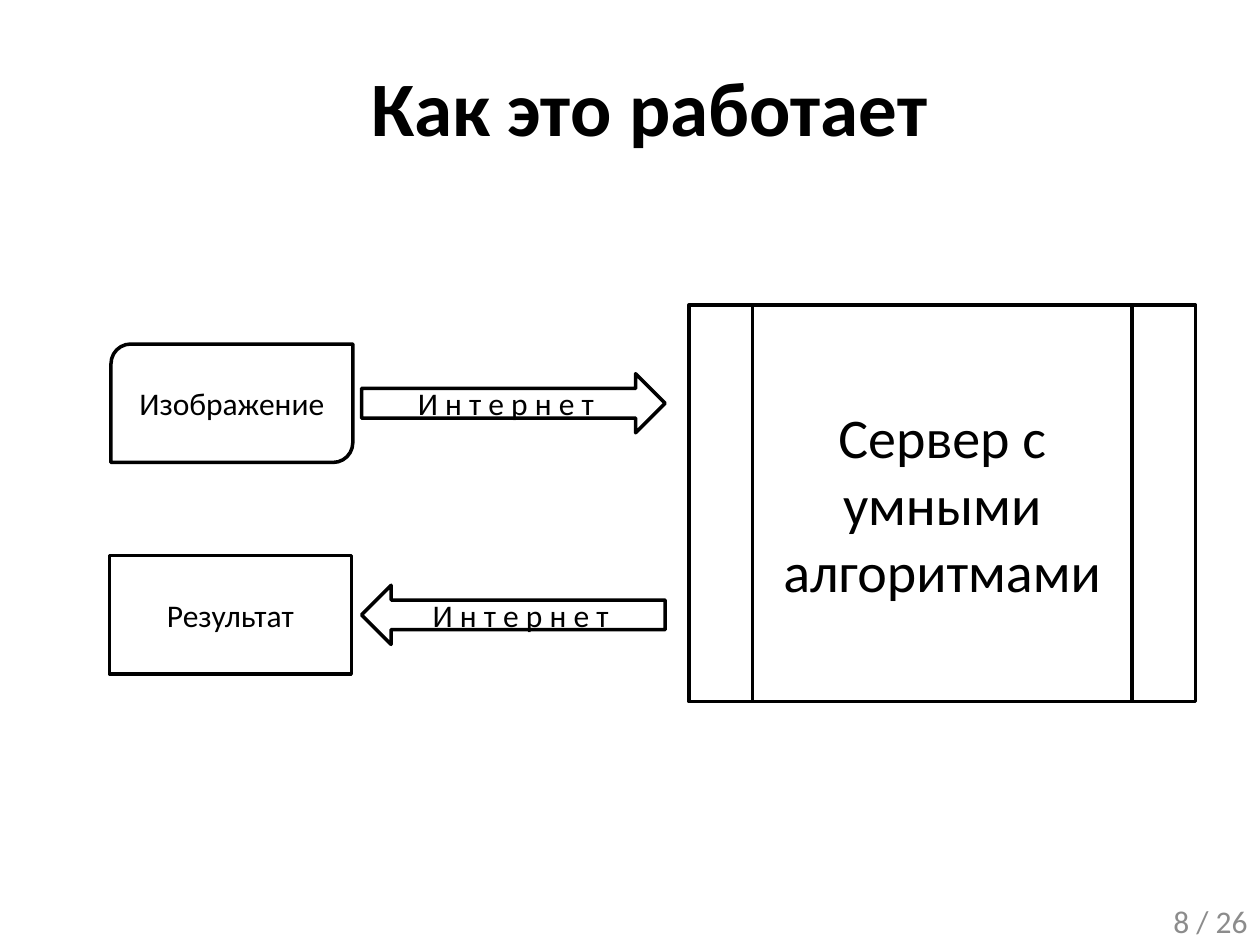
"""Build the "Как это работает" slide: image to server and result back."""
from typing import NamedTuple

from pptx import Presentation
from pptx.dml.color import RGBColor
from pptx.enum.shapes import MSO_SHAPE as SHAPE
from pptx.enum.text import MSO_ANCHOR as ANCHOR, PP_ALIGN as ALIGN
from pptx.util import Pt

BLACK = RGBColor(0x00, 0x00, 0x00)
WHITE = RGBColor(0xFF, 0xFF, 0xFF)
GRAY = RGBColor(0x8C, 0x8C, 0x8C)
FONT = "Calibri"


class Box(NamedTuple):
    left: float
    top: float
    width: float
    height: float


class Node(NamedTuple):
    kind: SHAPE
    box: Box
    text: str
    size: float = 18


BOX_W, BOX_H = 138.2, 67.7
ARROW_X, ARROW_W, ARROW_H = 206.6, 173.5, 33.8
SEND_Y, RETURN_Y = 196.6, 317.5
ARROW_DY = (BOX_H - ARROW_H) / 2

NODES = [
    Node(SHAPE.ROUND_2_DIAG_RECTANGLE, Box(63.4, SEND_Y, BOX_W, BOX_H), "Изображение"),
    Node(SHAPE.FLOWCHART_PREDEFINED_PROCESS, Box(393.8, 174.2, 289.4, 226.8),
         "Сервер с умными\nалгоритмами", 32),
    Node(SHAPE.RECTANGLE, Box(62.6, RETURN_Y, BOX_W, BOX_H), "Результат"),
    Node(SHAPE.RIGHT_ARROW, Box(ARROW_X, SEND_Y + ARROW_DY, ARROW_W, ARROW_H),
         "И н т е р н е т"),
    Node(SHAPE.LEFT_ARROW, Box(ARROW_X, RETURN_Y + ARROW_DY, ARROW_W, ARROW_H),
         "И н т е р н е т"),
]


def set_text(sp, text: str, size: float, color: RGBColor = BLACK,
             align: ALIGN = ALIGN.CENTER, bold: bool = False) -> None:
    tf = sp.text_frame
    tf.text = text
    tf.word_wrap = True
    tf.vertical_anchor = ANCHOR.MIDDLE
    for p in tf.paragraphs:
        p.alignment = align
        for r in p.runs:
            r.font.name = FONT
            r.font.size = Pt(size)
            r.font.bold = bold
            r.font.color.rgb = color


def add_label(s, box: Box, text: str, size: float, **style) -> None:
    set_text(s.shapes.add_textbox(*map(Pt, box)), text, size, **style)


def add_node(s, node: Node) -> None:
    sp = s.shapes.add_shape(node.kind, *map(Pt, node.box))
    sp.shadow.inherit = False
    sp.fill.solid()
    sp.fill.fore_color.rgb = WHITE
    sp.line.color.rgb = BLACK
    sp.line.width = Pt(2)
    set_text(sp, node.text, node.size)


def main() -> None:
    prs = Presentation()
    prs.slide_width, prs.slide_height = Pt(720), Pt(540)
    s = prs.slides.add_slide(prs.slide_layouts[6])
    add_label(s, Box(36.7, 15.1, 668.9, 90), "Как это работает", 44, bold=True)
    for node in NODES:
        add_node(s, node)
    add_label(s, Box(643.7, 514.1, 76.3, 24.5), "8 / 26", 18,
              color=GRAY, align=ALIGN.RIGHT)
    prs.save("out.pptx")


if __name__ == "__main__":
    main()
